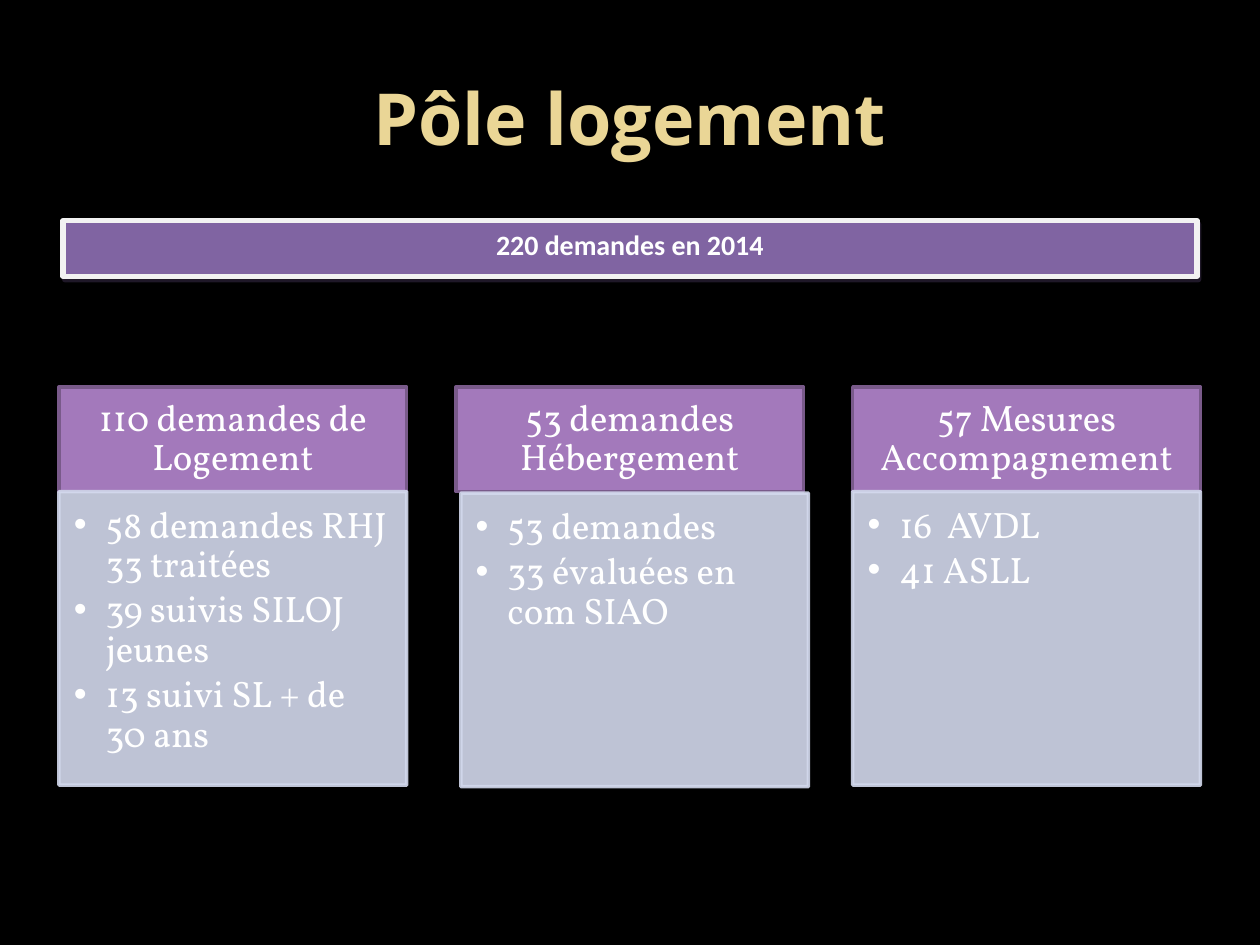
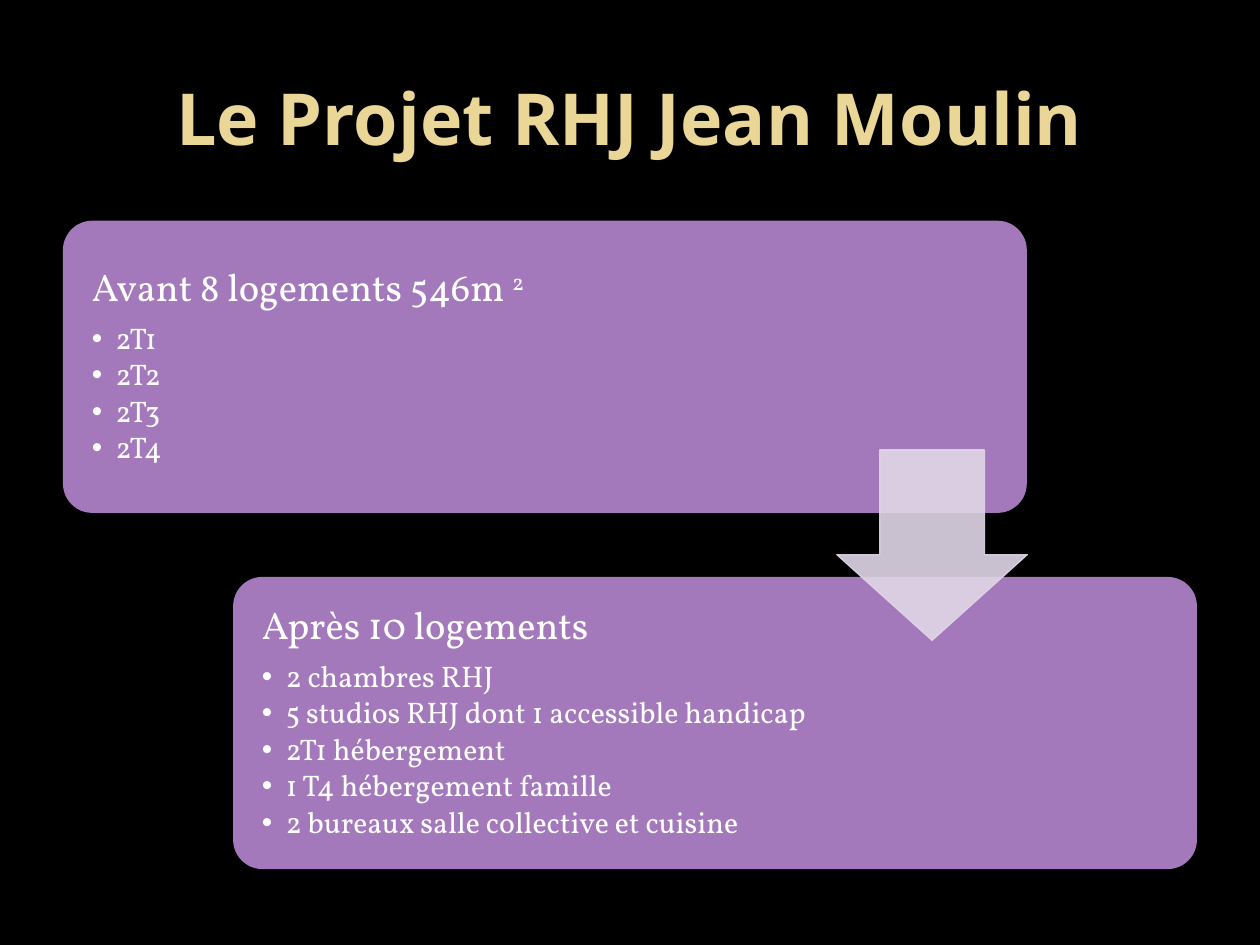
from lxml import etree
from pptx import Presentation
from pptx import util as u
from pptx.dml.color import RGBColor
from pptx.enum import shapes, text
from pptx.oxml.ns import qn

BLACK, WHITE, GOLD = "000000", "FFFFFF", "EAD696"
PURPLE, PLUM, MIST, LILAC = "A379BB", "795A8A", "D3D9ED", "E0D7E7"
SERIF = "Vollkorn"
SHAPE = shapes.MSO_SHAPE
MID, TOP = text.MSO_ANCHOR.MIDDLE, text.MSO_ANCHOR.TOP
LEFT, CENTER = text.PP_ALIGN.LEFT, text.PP_ALIGN.CENTER


def paint(target, color):
    if hasattr(target, "solid"):
        target.solid()
        target = target.fore_color
    target.rgb = RGBColor.from_string(color)


def add_tag(parent, name, **attrs):
    return etree.SubElement(parent, qn(name), attrs)


def add_box(slide, kind, area, fill, line=None, width=0, alpha=100):
    box = slide.shapes.add_shape(kind, *map(u.Cm, area))
    box.shadow.inherit = False
    paint(box.fill, fill)
    if line:
        paint(box.line.fill, line)
        box.line.width = u.Pt(width)
    else:
        box.line.fill.background()
    if alpha < 100:
        for tint in box.element.spPr.iter(qn("a:srgbClr")):
            add_tag(tint, "a:alpha", val=str(alpha * 1000))
    return box


def set_frame(box, anchor, insets):
    frame = box.text_frame
    frame.word_wrap = True
    frame.vertical_anchor = anchor
    (frame.margin_left, frame.margin_top,
     frame.margin_right, frame.margin_bottom) = map(u.Cm, insets)
    return frame


def style_para(para, size, font=SERIF, color=WHITE, bold=False, align=LEFT):
    para.alignment = align
    for run in para.runs:
        run.font.size = u.Pt(size)
        run.font.name = font
        run.font.bold = bold
        paint(run.font.color, color)


def set_gap(para, size, share):
    para.line_spacing = 0.9
    para.space_after = u.Pt(round(size * share, 1))


def style_item(para, size, indent):
    style_para(para, size)
    set_gap(para, size, 0.15)
    props = para._p.get_or_add_pPr()
    props.set("marL", str(u.Cm(indent)))
    props.set("indent", str(-u.Cm(indent)))
    add_tag(props, "a:buFont", typeface="Arial")
    add_tag(props, "a:buChar", char="•")


def add_slide(deck, title):
    slide = deck.slides.add_slide(deck.slide_layouts[6])
    paint(slide.background.fill, BLACK)
    box = slide.shapes.add_textbox(*map(u.Cm, (1.27, 0.76, 22.86, 3.18)))
    frame = set_frame(box, MID, (0.25, 0.13, 0.25, 0.13))
    frame.text = title
    style_para(frame.paragraphs[0], 41, "Open Sans", GOLD, True, CENTER)
    return slide


def add_banner(slide, label):
    box = add_box(slide, SHAPE.RECTANGLE, (1.27, 4.45, 22.86, 1.12),
                  "8064A2", "F2F2F2", 3)
    glow = add_tag(box.element.spPr.find(qn("a:effectLst")), "a:outerShdw",
                   dist=str(u.Pt(2.2)), dir=str(63 * 60000), rotWithShape="0")
    tint = add_tag(glow, "a:srgbClr", val="3F3151")
    add_tag(tint, "a:alpha", val="50000")
    frame = set_frame(box, TOP, (0.25, 0.13, 0.25, 0.13))
    frame.text = label
    style_para(frame.paragraphs[0], 16, "Calibri", bold=True, align=CENTER)


def add_column(slide, left, head, items, shift=(0, 0)):
    top, width, height = 7.8, 7.01, 2.11
    box = add_box(slide, SHAPE.RECTANGLE, (left, top, width, height),
                  PURPLE, PLUM, 2)
    frame = set_frame(box, MID, (0.4, 0.23, 0.4, 0.23))
    frame.text = head
    style_para(frame.paragraphs[0], 21, align=CENTER)
    set_gap(frame.paragraphs[0], 21, 0.35)

    area = (left + shift[0], top + height + shift[1], width, 5.92)
    box = add_box(slide, SHAPE.RECTANGLE, area, MIST, MIST, 2, 90)
    frame = set_frame(box, TOP, (0.3, 0.3, 0.4, 0.45))
    frame.text = "\n".join(items)
    for para in frame.paragraphs:
        style_item(para, 21, 0.64)


def add_stage(slide, left, top, head, items, power=""):
    box = add_box(slide, SHAPE.ROUNDED_RECTANGLE, (left, top, 19.43, 5.89),
                  PURPLE)
    box.adjustments[0] = 0.1
    frame = set_frame(box, MID, (0.41, 0.41, 0.41, 0.41))
    frame.text = "\n".join([head, *items])
    first, *rest = frame.paragraphs
    if power:
        run = first.add_run()
        run.text = power
        run.font._element.set("baseline", "30000")
    style_para(first, 22)
    set_gap(first, 22, 0.35)
    for para in rest:
        style_item(para, 17, 0.48)


def add_arrow(slide):
    box = add_box(slide, SHAPE.DOWN_ARROW, (16.87, 9.07, 3.84, 3.84),
                  LILAC, LILAC, 0.75, 90)
    box.adjustments[0] = 0.55
    box.adjustments[1] = 0.45


def main():
    deck = Presentation()
    deck.slide_width, deck.slide_height = u.Cm(25.4), u.Cm(19.05)

    slide = add_slide(deck, "Pôle logement")
    add_banner(slide, "220 demandes en 2014")
    columns = [
        ("110 demandes de Logement",
         ["58 demandes RHJ 33 traitées", "39 suivis SILOJ jeunes",
          "13 suivi SL + de 30 ans"], (0, 0)),
        ("53 demandes Hébergement",
         ["53 demandes", "33 évaluées en com SIAO"], (0.1, 0.03)),
        ("57 Mesures Accompagnement", ["16  AVDL", "41 ASLL"], (0, 0)),
    ]
    for num, (head, items, shift) in enumerate(columns):
        add_column(slide, 1.19 + 8 * num, head, items, shift)

    slide = add_slide(deck, "Le Projet RHJ Jean Moulin")
    add_stage(slide, 1.27, 4.45, "Avant 8 logements 546m ",
              ["2T1", "2T2", "2T3", "2T4"], "2")
    add_stage(slide, 4.7, 11.63, "Après 10 logements",
              ["2 chambres RHJ", "5 studios RHJ dont 1 accessible handicap",
               "2T1 hébergement", "1 T4 hébergement famille",
               "2 bureaux salle collective et cuisine"])
    add_arrow(slide)
    deck.save("out.pptx")


if __name__ == "__main__":
    main()
